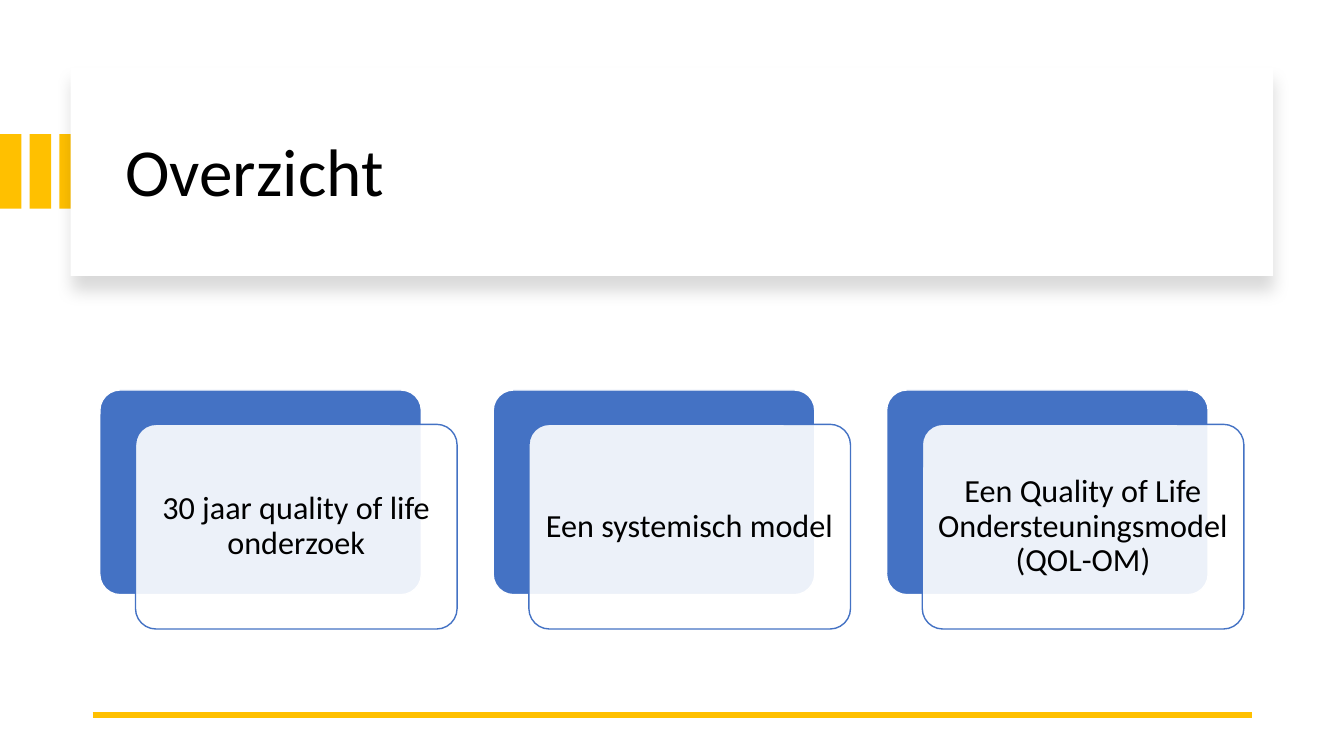
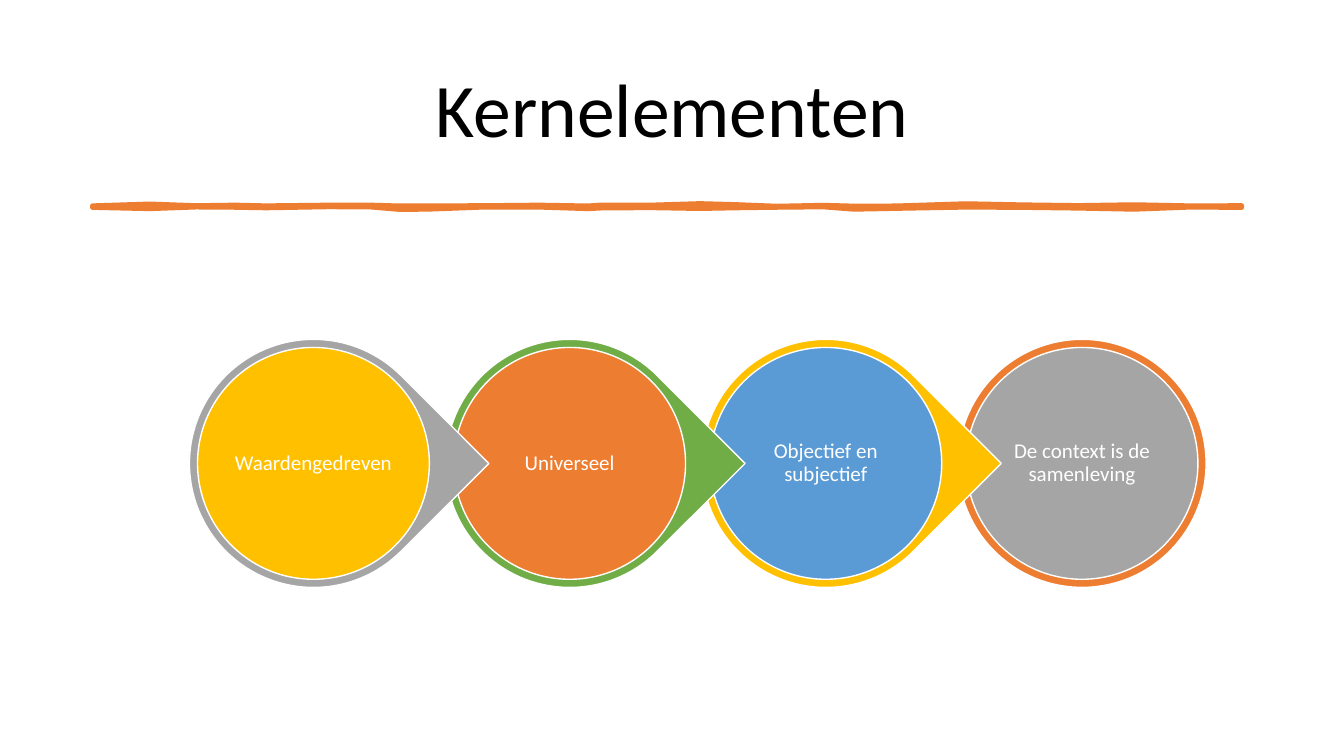
"""Builds two slides: an overview with cards and a chain of core elements."""
from lxml import etree
from pptx import Presentation
from pptx.dml.color import RGBColor
from pptx.enum.shapes import MSO_CONNECTOR, MSO_SHAPE
from pptx.enum.text import MSO_ANCHOR, PP_ALIGN
from pptx.oxml.ns import qn
from pptx.util import Pt

RECT = MSO_SHAPE.RECTANGLE
ROUND = MSO_SHAPE.ROUNDED_RECTANGLE
OVAL = MSO_SHAPE.OVAL
TEAR = MSO_SHAPE.TEAR
STRAIGHT = MSO_CONNECTOR.STRAIGHT
MIDDLE = MSO_ANCHOR.MIDDLE
LEFT, CENTER = PP_ALIGN.LEFT, PP_ALIGN.CENTER

FONT = "Calibri"
COLORS = {
    "white": "FFFFFF", "black": "000000", "gold": "FFC000", "blue": "4472C4",
    "sky": "5B9BD5", "orange": "ED7D31", "gray": "A5A5A5", "green": "70AD47",
}
CARDS = [
    "30 jaar quality of life onderzoek",
    "Een systemisch model",
    "Een Quality of Life Ondersteuningsmodel (QOL-OM)",
]
LINKS = [
    ("Waardengedreven", "gold", "gray"),
    ("Universeel", "orange", "green"),
    ("Objectief en subjectief", "sky", "gold"),
    ("De context is de samenleving", "gray", "orange"),
]
STROKE = [
    (66, 146.9, 148.3), (107, 145.6, 149.2), (140, 146.8, 148),
    (168, 146.4, 148.2), (190, 146.9, 148.6), (235, 146.4, 147.8),
    (265, 146.4, 148), (285, 147, 149.7), (305, 146.9, 149.6),
    (345, 146.8, 148.1), (385, 146.4, 148.1), (420, 147, 149.2),
    (430, 146.3, 148.7), (465, 146.4, 148.5), (500, 145.3, 149.1),
    (525, 146, 148.6), (555, 147.2, 148.2), (588, 146.5, 147.9),
    (610, 147.1, 149.6), (640, 147, 149), (690, 145.4, 148.1),
    (730, 146.2, 148.3), (770, 146.7, 148.8), (810, 146.1, 149.6),
    (850, 146.9, 148.1), (887, 146.8, 148.3),
]


def color(name):
    return RGBColor.from_string(COLORS[name])


def node(parent, tag, **attrs):
    return etree.SubElement(parent, qn(tag), attrs)


def paint(shape, fill, line=None, width=1):
    shape.shadow.inherit = False
    shape.fill.solid()
    shape.fill.fore_color.rgb = color(fill)
    if line:
        shape.line.color.rgb = color(line)
        shape.line.width = Pt(width)
    else:
        shape.line.fill.background()


def block(slide, kind, box, fill, line=None):
    shape = slide.shapes.add_shape(kind, *map(Pt, box))
    paint(shape, fill, line)
    return shape


def write(shape, text, size, tint, align=CENTER, pad=(7.2, 3.6)):
    frame = shape.text_frame
    frame.word_wrap = True
    frame.vertical_anchor = MIDDLE
    frame.margin_left = frame.margin_right = Pt(pad[0])
    frame.margin_top = frame.margin_bottom = Pt(pad[1])
    para = frame.paragraphs[0]
    para.alignment = align
    para.line_spacing = 0.9
    run = para.add_run()
    run.text = text
    run.font.name = FONT
    run.font.size = Pt(size)
    run.font.color.rgb = color(tint)


def title(slide, text, box, size, align):
    label = slide.shapes.add_textbox(*map(Pt, box))
    write(label, text, size, "black", align)


def panel(slide):
    shape = block(slide, RECT, (50.4, 48.2, 859, 149), "white")
    effects = shape._element.spPr.find(qn("a:effectLst"))
    shade = node(effects, "a:outerShdw", blurRad=str(Pt(11)),
                 dist=str(Pt(10)), dir="5400000", algn="t", rotWithShape="0")
    tint = node(shade, "a:srgbClr", val=COLORS["black"])
    node(tint, "a:alpha", val="15000")


def rule(slide, left, right, top):
    line = slide.shapes.add_connector(
        STRAIGHT, Pt(left), Pt(top), Pt(right), Pt(top))
    line.line.color.rgb = color("gold")
    line.line.width = Pt(4.5)
    node(line._element.spPr, "a:effectLst")


def card(slide, left, text):
    top, wide, high = 278.6, 229.7, 146.2
    back = block(slide, ROUND, (left, top, wide, high), "blue", "white")
    front = block(slide, ROUND, (left + 25.5, top + 24.5, wide, high),
                  "white", "blue")
    for shape in (back, front):
        shape.adjustments[0] = 0.1
    tint = front._element.spPr.find(qn("a:solidFill"))[0]
    node(tint, "a:alpha", val="90000")
    write(front, text, 23, "black", pad=(5, 5))


def brush(slide):
    edge = [(x, top) for x, top, _ in STROKE]
    edge += [(x, low) for x, _, low in reversed(STROKE)]
    points = [(Pt(x), Pt(y)) for x, y in edge]
    pen = slide.shapes.build_freeform(*points[0], scale=1.0)
    pen.add_line_segments(points[1:], close=True)
    shape = pen.convert_to_shape()
    paint(shape, "orange", "orange", 3.25)
    node(shape.line._get_or_add_ln(), "a:round")


def link(slide, left, text, fill, rim, last):
    top, disc, gap = 248.2, 165.6, 5.8
    side = disc + 2 * gap
    ring = block(slide, OVAL if last else TEAR,
                 (left - gap, top - gap, side, side), rim, "white")
    if not last:
        ring.rotation = 45
    face = block(slide, OVAL, (left, top, disc, disc), fill, "white")
    write(face, text, 15, "white", pad=(1.4, 1.4))


def overview(slide):
    for i in range(3):
        block(slide, RECT, (21.2 * i, 95.8, 15.3, 53.3), "gold")
    panel(slide)
    title(slide, "Overzicht", (82.4, 63.8, 801, 122.4), 48, LEFT)
    rule(slide, 66.2, 894.2, 510.5)
    for i, text in enumerate(CARDS):
        card(slide, 71.3 + 281 * i, text)


def core(slide):
    title(slide, "Kernelementen", (66.2, 28.8, 828, 104.4), 54, CENTER)
    brush(slide)
    end = len(LINKS) - 1
    for i in range(end, -1, -1):
        link(slide, 141.1 + 183 * i, *LINKS[i], i == end)


def main():
    deck = Presentation()
    deck.slide_width, deck.slide_height = Pt(960), Pt(540)
    for build in (overview, core):
        build(deck.slides.add_slide(deck.slide_layouts[6]))
    deck.save("out.pptx")


if __name__ == "__main__":
    main()
